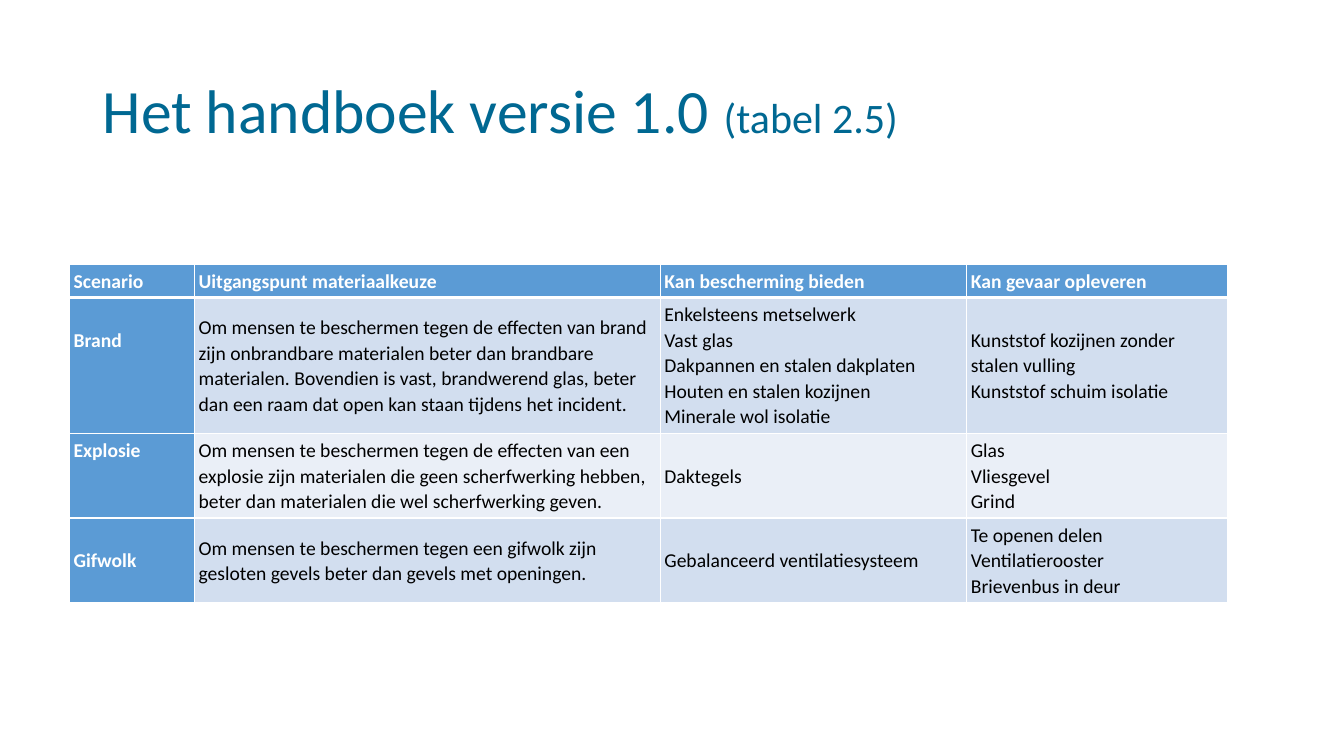
from lxml import etree
from pptx import Presentation
from pptx import util as u
from pptx.dml import color
from pptx.enum import text
from pptx.oxml import ns

COLUMN_WIDTHS = [1.24, 4.62, 3.04, 2.59]
ROW_HEIGHTS = [0.33, 1.35, 0.84, 0.84]
SCENARIOS = [
    ["Scenario", "Uitgangspunt materiaalkeuze", "Kan bescherming bieden", "Kan gevaar opleveren"],
    ["Brand",
     "Om mensen te beschermen tegen de effecten van brand zijn onbrandbare materialen beter dan "
     "brandbare materialen. Bovendien is vast, brandwerend glas, beter dan een raam dat open kan "
     "staan tijdens het incident.",
     "Enkelsteens metselwerk\nVast glas\nDakpannen en stalen dakplaten\n"
     "Houten en stalen kozijnen\nMinerale wol isolatie",
     "Kunststof kozijnen zonder stalen vulling\nKunststof schuim isolatie"],
    ["Explosie",
     "Om mensen te beschermen tegen de effecten van een explosie zijn materialen die geen "
     "scherfwerking hebben, beter dan materialen die wel scherfwerking geven.",
     "Daktegels",
     "Glas\nVliesgevel\nGrind"],
    ["Gifwolk",
     "Om mensen te beschermen tegen een gifwolk zijn gesloten gevels beter dan gevels met openingen.",
     "Gebalanceerd ventilatiesysteem",
     "Te openen delen\nVentilatierooster\nBrievenbus in deur"],
]
RAISED_LABELS = {"Brand", "Explosie"}


def rgb(value):
    """Turn a hex string into a colour."""
    return color.RGBColor.from_string(value)


def apply(target, formats):
    """Set every attribute in a dict of format values."""
    for name, value in formats.items():
        setattr(target, name, value)


class HandbookSlide:
    """Hold the style and the slide being filled."""

    font = "Calibri"
    title_color = "006892"
    accent = "5B9BD5"
    bands = ["EAEFF7", "D2DEEF"]
    white = "FFFFFF"
    black = "000000"

    def __init__(self, deck):
        """Add a blank slide to the deck."""
        self.slide = deck.slides.add_slide(deck.slide_layouts[6])

    def style(self, font, size, hex_color, bold=False):
        """Format a font."""
        apply(font, {"name": self.font, "size": u.Pt(size), "bold": bold})
        font.color.rgb = rgb(hex_color)

    def title(self, parts, left, top, width, height):
        """Add a one-line title from wording and size pairs."""
        box = self.slide.shapes.add_textbox(*map(u.Inches, (left, top, width, height)))
        apply(box.text_frame, {"word_wrap": True, "vertical_anchor": text.MSO_ANCHOR.MIDDLE})
        heading = box.text_frame.paragraphs[0]
        heading.line_spacing = 0.9
        for wording, size in parts:
            run = heading.add_run()
            run.text = wording
            self.style(run.font, size, self.title_color)

    def borders(self, cell, widths):
        """Draw white cell borders with widths in points by side."""
        properties = cell._tc.get_or_add_tcPr()
        for side, width in widths.items():
            line = etree.SubElement(properties, ns.qn(f"a:ln{side}"), w=str(u.Pt(width)))
            fill = etree.SubElement(line, ns.qn("a:solidFill"))
            etree.SubElement(fill, ns.qn("a:srgbClr"), val=self.white)

    def cell(self, cell, wording, row, column):
        """Fill and format one table cell."""
        marked = row == 0 or column == 0
        margin = u.Inches(0.04)
        apply(cell, {
            "text": wording,
            "vertical_anchor": text.MSO_ANCHOR.MIDDLE,
            "margin_left": margin,
            "margin_right": margin,
            "margin_top": margin,
            "margin_bottom": u.Inches(0.55) if wording in RAISED_LABELS else margin,
        })
        self.borders(cell, {"L": 1, "R": 1, "T": 3 if row == 1 else 1, "B": 3 if row == 0 else 1})
        cell.fill.solid()
        cell.fill.fore_color.rgb = rgb(self.accent if marked else self.bands[row % 2])
        for paragraph in cell.text_frame.paragraphs:
            paragraph.line_spacing = 1.07
            for run in paragraph.runs:
                self.style(run.font, 14, self.white if marked else self.black, marked)

    def table(self, rows, left, top, widths, heights):
        """Add a table with the given column widths and row heights."""
        frame = self.slide.shapes.add_table(
            len(rows), len(widths),
            *map(u.Inches, (left, top, sum(widths), sum(heights))))
        grid = frame.table
        for column, width in zip(grid.columns, widths):
            column.width = u.Inches(width)
        for row, height in zip(grid.rows, heights):
            row.height = u.Inches(height)
        for row, wordings in enumerate(rows):
            for column, wording in enumerate(wordings):
                self.cell(grid.cell(row, column), wording, row, column)


def main():
    """Build and save the slide."""
    deck = Presentation()
    apply(deck, {"slide_width": u.Inches(13.33), "slide_height": u.Inches(7.5)})
    handbook = HandbookSlide(deck)
    handbook.title([("Het handboek versie 1.0 ", 44), ("(tabel 2.5)", 30)], 0.92, 0.4, 11.5, 1.45)
    handbook.table(SCENARIOS, 0.69, 2.62, COLUMN_WIDTHS, ROW_HEIGHTS)
    deck.save("out.pptx")


if __name__ == "__main__":
    main()
